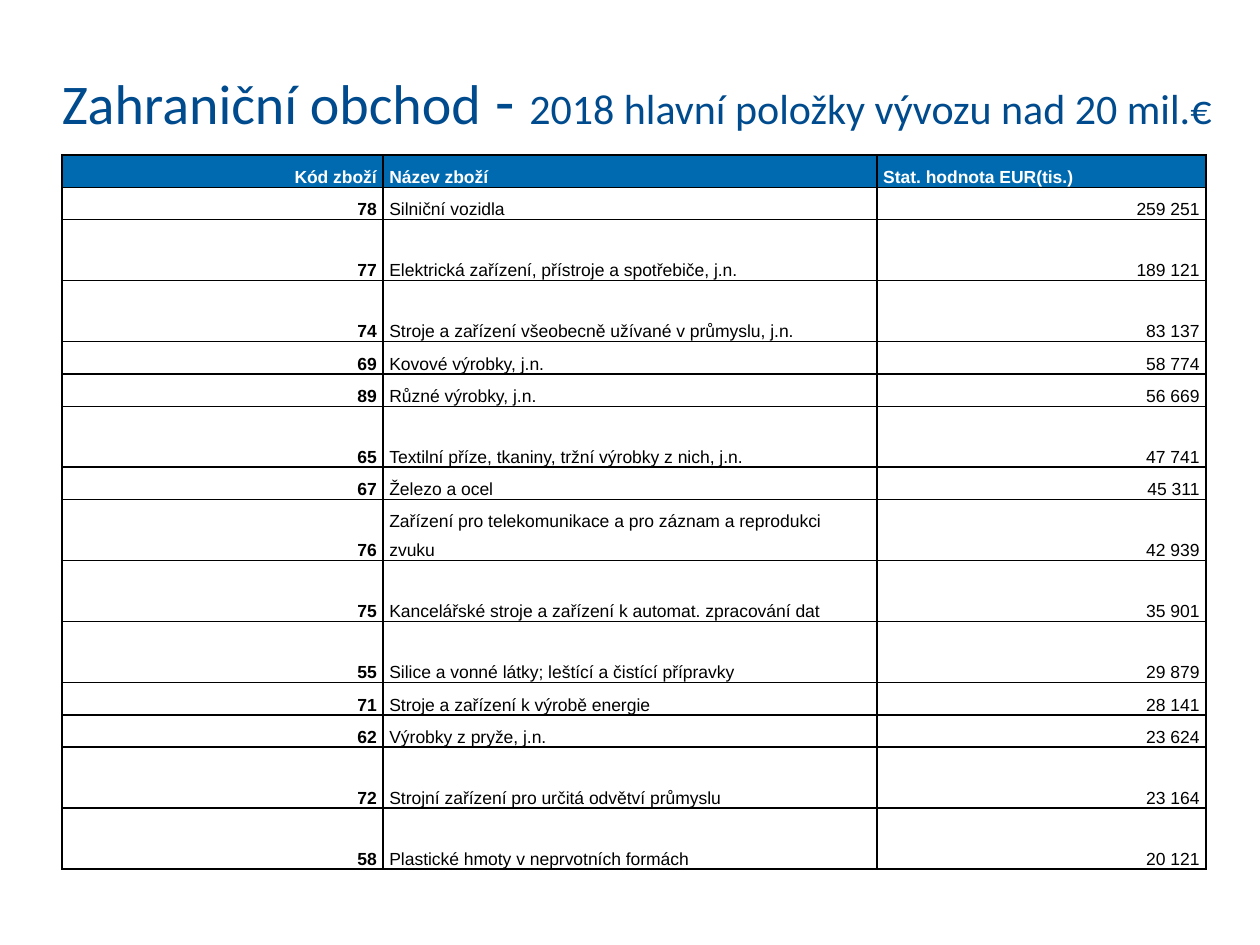
from dataclasses import dataclass

from lxml import etree
from pptx import Presentation
from pptx.dml.color import RGBColor
from pptx.enum.text import MSO_ANCHOR, MSO_AUTO_SIZE, PP_ALIGN
from pptx.oxml.ns import qn
from pptx.util import Inches, Pt

LEFT, RIGHT = PP_ALIGN.LEFT, PP_ALIGN.RIGHT
TOP, BOTTOM = MSO_ANCHOR.TOP, MSO_ANCHOR.BOTTOM
GROW = MSO_AUTO_SIZE.SHAPE_TO_FIT_TEXT
TITLE_ONLY = 5
GRID_COLUMNS, GRID_ROWS = 100, 75


@dataclass(frozen=True)
class Theme:
    heading: str = "004B8D"
    header_fill: str = "006AB1"
    header_text: str = "FFFFFF"
    body_fill: str = "FFFFFF"
    body_text: str = "000000"
    border: str = "000000"
    heading_font: str = "Calibri"
    table_font: str = "Arial"
    topic_size: int = 32
    dash_size: int = 36
    subtopic_size: int = 24
    table_size: int = 10
    line_spacing: int = 17
    border_width: int = 1


def apply(target, values):
    for name, value in values.items():
        setattr(target, name, value)


class SlideBuilder:
    def __init__(self, deck, theme):
        self.theme = theme
        self.column = deck.slide_width / GRID_COLUMNS
        self.row = deck.slide_height / GRID_ROWS
        self.slide = deck.slides.add_slide(deck.slide_layouts[TITLE_ONLY])

    def place(self, left, top, width, height):
        return {
            "left": round(left * self.column),
            "top": round(top * self.row),
            "width": round(width * self.column),
            "height": round(height * self.row),
        }

    def add_text(self, paragraph, text, color, **font):
        run = paragraph.add_run()
        run.text = text
        apply(run.font, font)
        run.font.color.rgb = RGBColor.from_string(color)

    def title(self, parts, area):
        heading = self.slide.shapes.title
        apply(heading, self.place(*area))
        frame = heading.text_frame
        apply(frame, {
            "margin_left": 0, "margin_right": 0, "margin_top": 0, "margin_bottom": 0,
            "word_wrap": True, "vertical_anchor": TOP, "auto_size": GROW,
        })
        paragraph = frame.paragraphs[0]
        paragraph.alignment = LEFT
        for text, size in parts:
            self.add_text(paragraph, text, self.theme.heading,
                          name=self.theme.heading_font, size=Pt(size))

    def border(self, cell):
        properties = cell._tc.get_or_add_tcPr()
        for side in ("a:lnL", "a:lnR", "a:lnT", "a:lnB"):
            line = etree.SubElement(properties, qn(side), w=str(Pt(self.theme.border_width)))
            fill = etree.SubElement(line, qn("a:solidFill"))
            etree.SubElement(fill, qn("a:srgbClr"), val=self.theme.border)

    def cell(self, cell, text, fill, color, bold, alignment):
        self.border(cell)
        cell.fill.solid()
        cell.fill.fore_color.rgb = RGBColor.from_string(fill)
        apply(cell, {
            "margin_left": Inches(0.05), "margin_right": Inches(0.05),
            "margin_top": 0, "margin_bottom": 0, "vertical_anchor": BOTTOM,
        })
        paragraph = cell.text_frame.paragraphs[0]
        apply(paragraph, {"alignment": alignment, "line_spacing": Pt(self.theme.line_spacing)})
        self.add_text(paragraph, text, color, name=self.theme.table_font,
                      size=Pt(self.theme.table_size), bold=bold)

    def table(self, header, records, left, top, widths, heights):
        theme = self.theme
        area = self.place(left, top, sum(widths), sum(heights))
        table = self.slide.shapes.add_table(len(heights), len(widths), **area).table
        for column, width in zip(table.columns, widths):
            column.width = round(width * self.column)
        for row, height in zip(table.rows, heights):
            row.height = round(height * self.row)
        for index, label in enumerate(header):
            self.cell(table.cell(0, index), label, theme.header_fill, theme.header_text,
                      True, RIGHT if index == 0 else LEFT)
        for row, record in enumerate(records, start=1):
            for index, value in enumerate(record):
                self.cell(table.cell(row, index), value, theme.body_fill, theme.body_text,
                          index == 0, LEFT if index == 1 else RIGHT)


HEADER = ("Kód zboží", "Název zboží", "Stat. hodnota EUR(tis.)")
EXPORTS = (
    ("78", "Silniční vozidla", "259 251"),
    ("77", "Elektrická zařízení, přístroje a spotřebiče, j.n.", "189 121"),
    ("74", "Stroje a zařízení všeobecně užívané v průmyslu, j.n.", "83 137"),
    ("69", "Kovové výrobky, j.n.", "58 774"),
    ("89", "Různé výrobky, j.n.", "56 669"),
    ("65", "Textilní příze, tkaniny, tržní výrobky z nich, j.n.", "47 741"),
    ("67", "Železo a ocel", "45 311"),
    ("76", "Zařízení pro telekomunikace a pro záznam a reprodukci zvuku", "42 939"),
    ("75", "Kancelářské stroje a zařízení k automat. zpracování dat", "35 901"),
    ("55", "Silice a vonné látky; leštící a čistící přípravky", "29 879"),
    ("71", "Stroje a zařízení k výrobě energie", "28 141"),
    ("62", "Výrobky z pryže, j.n.", "23 624"),
    ("72", "Strojní zařízení pro určitá odvětví průmyslu", "23 164"),
    ("58", "Plastické hmoty v neprvotních formách", "20 121"),
)
LEFT_EDGE = 4.9
COLUMN_WIDTHS = (25.5, 39.2, 26.1)
SHORT_ROW, TALL_ROW = 2.57, 4.84
LONG_NAME = 35


def main():
    deck = Presentation()
    apply(deck, {"slide_width": Inches(10), "slide_height": Inches(7.5)})
    theme = Theme()
    builder = SlideBuilder(deck, theme)
    builder.title(
        (
            ("Zahraniční obchod", theme.topic_size),
            (" - ", theme.dash_size),
            ("2018 hlavní položky vývozu nad 20 mil.€", theme.subtopic_size),
        ),
        (LEFT_EDGE, 4.9, 93, 6.1),
    )
    heights = [SHORT_ROW] + [
        TALL_ROW if len(name) > LONG_NAME else SHORT_ROW for _, name, _ in EXPORTS
    ]
    builder.table(HEADER, EXPORTS, LEFT_EDGE, 12.3, COLUMN_WIDTHS, heights)
    deck.save("out.pptx")


if __name__ == "__main__":
    main()
